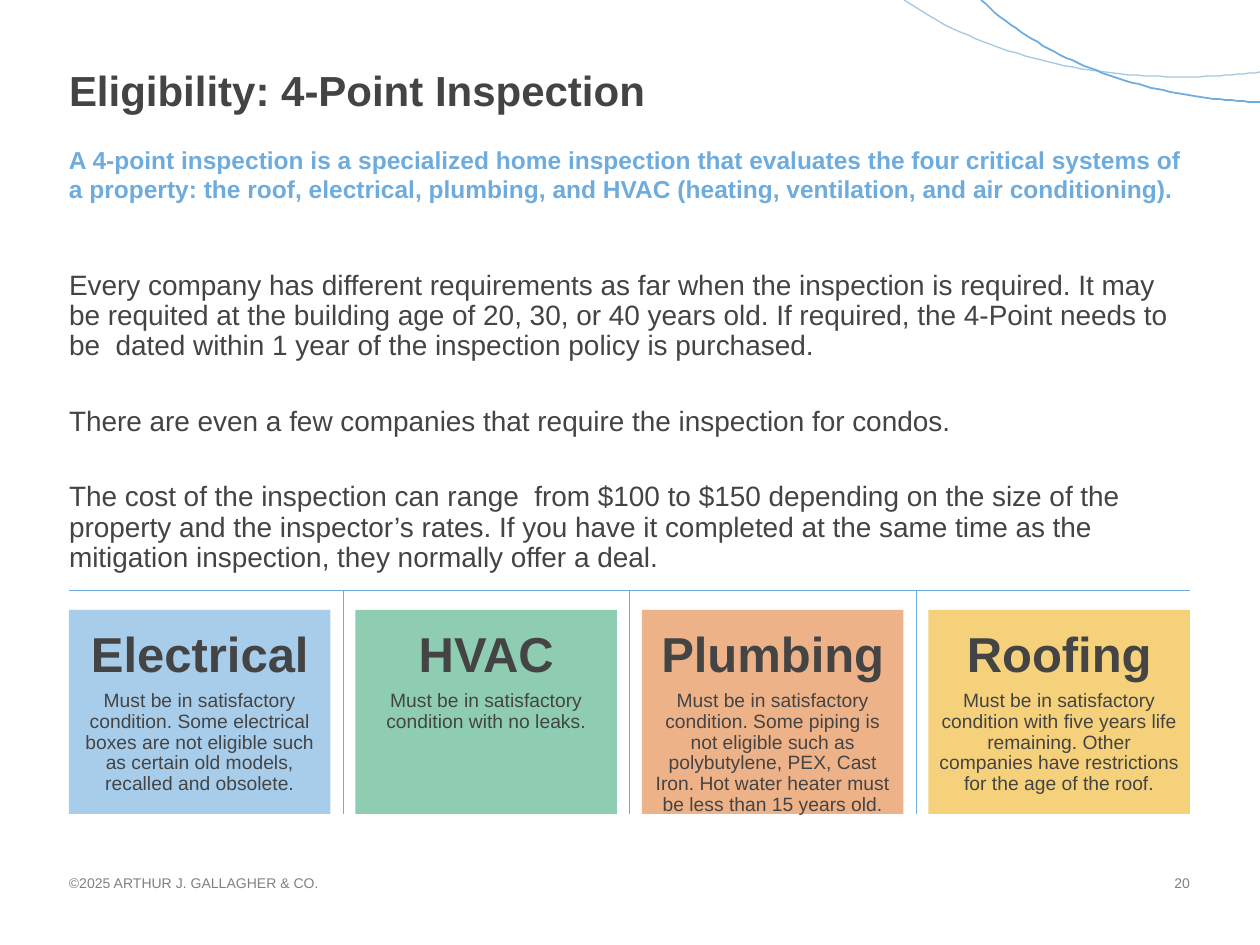
from lxml import etree
from pptx import Presentation, util as u
from pptx.dml.color import RGBColor
from pptx.enum import shapes, text
from pptx.oxml.ns import qn

PX = 914400 / 126
LEFT, WIDTH = 69, 1121
BLUE, DARK, GREY = "6EACDD", "444444", "808080"
RULE_Y, CARD_Y, CARD_H, GAP = 590, 610, 204, 25

CARDS = [
    ("Electrical", "A8CDEB",
     "Must be in satisfactory condition. Some electrical boxes are not eligible such "
     "as certain old models, recalled and obsolete."),
    ("HVAC", "8FCDB3", "Must be in satisfactory condition with no leaks."),
    ("Plumbing", "EEB289",
     "Must be in satisfactory condition. Some piping is not eligible such as "
     "polybutylene, PEX, Cast Iron. Hot water heater must be less than 15 years old."),
    ("Roofing", "F6D17B",
     "Must be in satisfactory condition with five years life remaining. Other "
     "companies have restrictions for the age of the roof."),
]
BODY = [
    "Every company has different requirements as far when the inspection is required. "
    "It may be requited at the building age of 20, 30, or 40 years old. If required, "
    "the 4-Point needs to be  dated within 1 year of the inspection policy is purchased.",
    "There are even a few companies that require the inspection for condos.",
    "The cost of the inspection can range  from $100 to $150 depending on the size of "
    "the property and the inspector’s rates. If you have it completed at the same time "
    "as the mitigation inspection, they normally offer a deal.",
]


def px(n):
    return u.Emu(round(n * PX))


def rgb(value):
    return RGBColor.from_string(value)


def place(sp, x, y, w, h):
    sp.left, sp.top, sp.width, sp.height = px(x), px(y), px(w), px(h)


def frame(sp, mx=0, my=0, wrap=True, anchor=text.MSO_ANCHOR.TOP):
    tf = sp.text_frame
    tf.word_wrap, tf.vertical_anchor = wrap, anchor
    tf.auto_size = text.MSO_AUTO_SIZE.NONE
    tf.margin_left = tf.margin_right = px(mx)
    tf.margin_top = tf.margin_bottom = px(my)
    return tf


def write(p, words, size, color=DARK, bold=False, align=text.PP_ALIGN.LEFT,
          spacing=1.0, after=0):
    pPr = p._p.get_or_add_pPr()
    pPr.set("marL", "0")
    pPr.set("indent", "0")
    etree.SubElement(pPr, qn("a:buNone"))
    p.alignment, p.line_spacing = align, spacing
    p.space_before, p.space_after = u.Pt(0), u.Pt(after)
    r = p.add_run()
    r.text = words
    f = r.font
    f.name, f.size, f.bold = "Arial", u.Pt(size), bold
    f.color.rgb = rgb(color)


def label(s, box, words, size, color, **fmt):
    sp = s.shapes.add_textbox(0, 0, 0, 0)
    place(sp, *box)
    write(frame(sp).paragraphs[0], words, size, color, **fmt)


def rule(s, x1, y1, x2, y2):
    c = s.shapes.add_connector(shapes.MSO_CONNECTOR.STRAIGHT,
                               px(x1), px(y1), px(x2), px(y2))
    c.line.color.rgb, c.line.width = rgb(BLUE), u.Pt(0.25)
    etree.SubElement(c._element.spPr, qn("a:effectLst"))


def curve(s, points, color, width, steps=48):
    """Draw a cubic Bezier given by four points."""
    def at(t):
        weights = ((1 - t) ** 3, 3 * t * (1 - t) ** 2, 3 * t * t * (1 - t), t ** 3)
        return tuple(sum(k * p[i] for k, p in zip(weights, points)) for i in (0, 1))

    fb = s.shapes.build_freeform(*at(0), scale=PX)
    fb.add_line_segments([at(n / steps) for n in range(1, steps + 1)], close=False)
    sp = fb.convert_to_shape()
    sp.shadow.inherit = False
    sp.fill.background()
    sp.line.color.rgb, sp.line.width = rgb(color), u.Pt(width)


def card(s, x, w, heading, fill, words):
    sp = s.shapes.add_shape(shapes.MSO_SHAPE.RECTANGLE, 0, 0, 0, 0)
    place(sp, x, CARD_Y, w, CARD_H)
    sp.shadow.inherit = False
    sp.fill.solid()
    sp.fill.fore_color.rgb = rgb(fill)
    sp.line.fill.background()
    tf = frame(sp, 10, 20)
    fmt = dict(align=text.PP_ALIGN.CENTER, spacing=0.9, after=4.5)
    write(tf.paragraphs[0], heading, 28, bold=True, **fmt)
    write(tf.add_paragraph(), words, 11, **fmt)


def main():
    prs = Presentation()
    prs.slide_width, prs.slide_height = px(1260), px(945)
    s = prs.slides.add_slide(prs.slide_layouts[1])
    title, body = s.placeholders

    # Corner curves
    curve(s, [(1260, 72), (1177, 82), (1028, 84), (904, 0)], "A4C8E1", 0.75)
    curve(s, [(1260, 102), (1168, 100), (1056, 71), (981, 0)], BLUE, 1)

    # Title, lead and body text
    place(title, LEFT, 70, 965, 67)
    write(frame(title).paragraphs[0], "Eligibility: 4-Point Inspection", 24,
          bold=True, spacing=0.9)
    label(s, (LEFT, 145, WIDTH, 74),
          "A 4-point inspection is a specialized home inspection that evaluates the four "
          "critical systems of a property: the roof, electrical, plumbing, and HVAC "
          "(heating, ventilation, and air conditioning).", 14, BLUE, bold=True)
    place(body, LEFT, 271, WIDTH, 300)
    tf = frame(body)
    for i, words in enumerate(BODY):
        p = tf.add_paragraph() if i else tf.paragraphs[0]
        write(p, words, 16, spacing=0.9, after=26)

    # Cards with dividers centred in the gaps
    rule(s, LEFT, RULE_Y, LEFT + WIDTH, RULE_Y)
    w = (WIDTH - GAP * (len(CARDS) - 1)) / len(CARDS)
    for i, content in enumerate(CARDS):
        x = LEFT + i * (w + GAP)
        if i:
            rule(s, x - GAP / 2, RULE_Y, x - GAP / 2, CARD_Y + CARD_H)
        card(s, x, w, *content)

    # Footer
    label(s, (LEFT, 874, 254, 17), "©2025 ARTHUR J. GALLAGHER & CO.", 8, GREY)
    label(s, (1165, 874, 25, 17), "20", 8, GREY, align=text.PP_ALIGN.RIGHT)

    prs.save("out.pptx")


if __name__ == "__main__":
    main()
